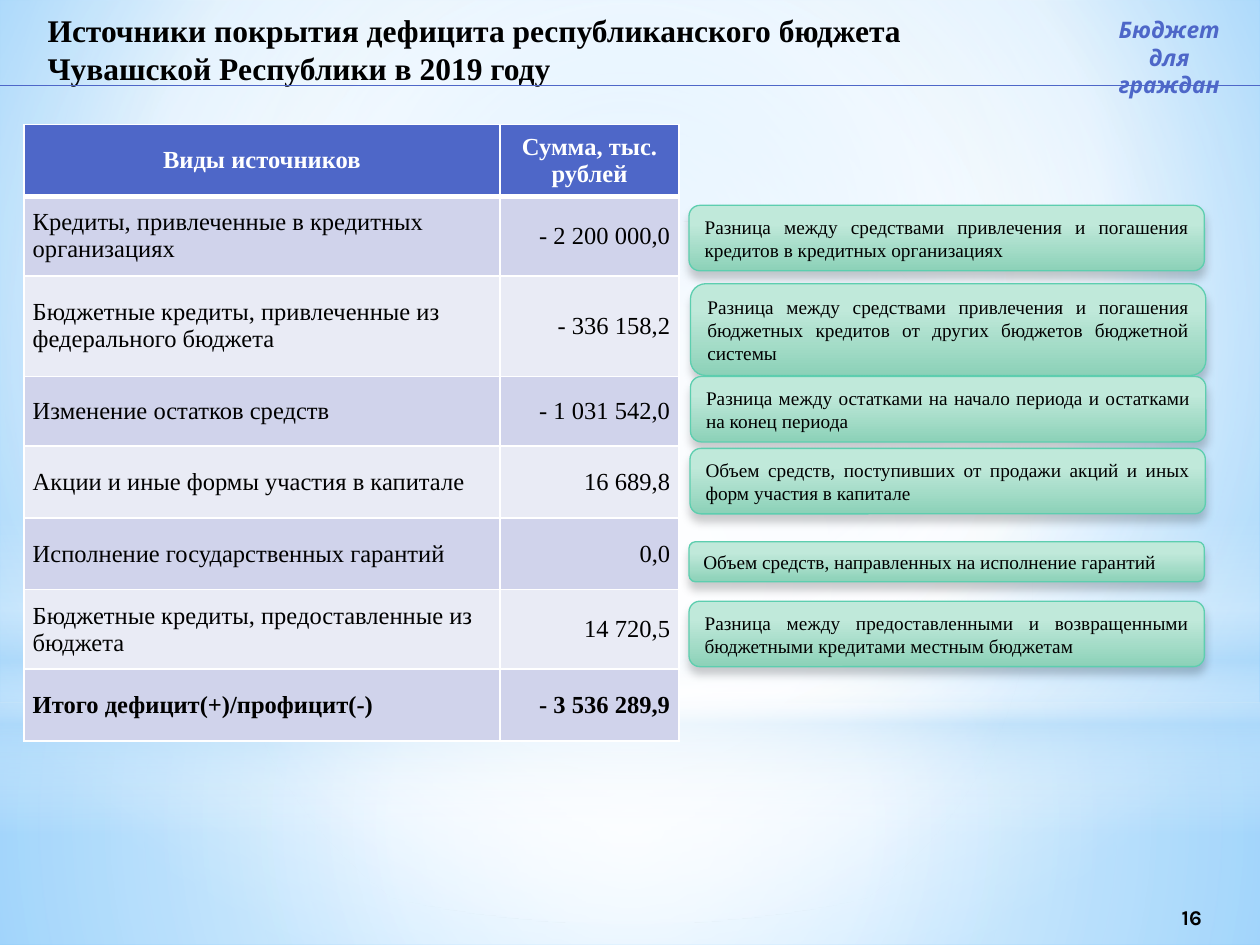
from lxml.etree import SubElement
from pptx import Presentation
from pptx.dml.color import RGBColor
from pptx.enum.shapes import MSO_CONNECTOR, MSO_SHAPE
from pptx.enum.text import MSO_ANCHOR, MSO_AUTO_SIZE, PP_ALIGN
from pptx.oxml import parse_xml
from pptx.oxml.ns import nsdecls, qn
from pptx.util import Cm, Pt

ROWS = [
    ("Виды источников", "Сумма, тыс. рублей", 1.45),
    ("Кредиты, привлеченные в кредитных организациях", "- 2 200 000,0", 1.6),
    ("Бюджетные кредиты, привлеченные из федерального бюджета", "- 336 158,2", 2.03),
    ("Изменение остатков средств", "- 1 031 542,0", 1.4),
    ("Акции и иные формы участия в капитале", "16 689,8", 1.45),
    ("Исполнение государственных гарантий", "0,0", 1.45),
    ("Бюджетные кредиты, предоставленные из бюджета", "14 720,5", 1.6),
    ("Итого дефицит(+)/профицит(-)", "- 3 536 289,9", 1.45),
]
NOTES = [
    (13.89, 4.14, 1.32, "Разница между средствами привлечения и погашения кредитов "
                        "в кредитных организациях"),
    (13.92, 5.72, 1.85, "Разница между средствами привлечения и погашения бюджетных "
                        "кредитов от других бюджетов бюджетной системы"),
    (13.92, 7.59, 1.32, "Разница между остатками на начало периода и остатками "
                        "на конец периода"),
    (13.91, 9.04, 1.32, "Объем средств, поступивших от продажи акций и иных форм "
                        "участия в капитале"),
    (13.89, 10.92, 0.81, "Объем средств, направленных на исполнение гарантий"),
    (13.89, 12.12, 1.32, "Разница между предоставленными и возвращенными бюджетными "
                         "кредитами местным бюджетам"),
]
WHITE, SKY = "FFFFFF", "B4DCFA"
LINEAR = '<a:lin ang="5400000" scaled="0"/>'


def color(value):
    return RGBColor.from_string(value)


def circle(left=50, top=50, right=50, bottom=50):
    return (f'<a:path path="circle"><a:fillToRect l="{left * 1000}" t="{top * 1000}" '
            f'r="{right * 1000}" b="{bottom * 1000}"/></a:path>')


def gradient(stops, direction):
    entries = "".join(
        f'<a:gs pos="{position * 1000}"><a:srgbClr val="{value}">'
        f'<a:alpha val="{opacity * 1000}"/></a:srgbClr></a:gs>'
        for position, value, opacity in stops)
    return parse_xml(f'<a:gradFill {nsdecls("a")} rotWithShape="1">'
                     f'<a:gsLst>{entries}</a:gsLst>{direction}</a:gradFill>')


class BudgetSlide:
    serif, sans = "Times New Roman", "Karla"
    accent, black = "4E67C8", "000000"
    bands = ("E9EBF5", "D0D3EB")
    mint = [(28, "C0E9DA", 100), (100, "8CD1B8", 100)]
    mint_line = "5DCEAF"

    def __init__(self, presentation):
        self.slide = presentation.slides.add_slide(presentation.slide_layouts[6])

    def background(self, stops, direction):
        self.slide.background.fill.solid()
        properties = self.slide.element.find(".//" + qn("p:bgPr"))
        properties.replace(properties[0], gradient(stops, direction))

    def set_text(self, text_frame, text, size, font, value, alignment, bold=False, italic=False):
        text_frame.text = text
        text_frame.word_wrap = True
        for paragraph in text_frame.paragraphs:
            paragraph.alignment = alignment
            for run in paragraph.runs:
                run.font.size, run.font.name = Pt(size), font
                run.font.bold, run.font.italic = bold, italic
                run.font.color.rgb = color(value)

    def glow(self, kind, left, top, width, height, stops, direction):
        shape = self.slide.shapes.add_shape(kind, Cm(left), Cm(top), Cm(width), Cm(height))
        shape.shadow.inherit = False
        shape.line.fill.background()
        shape.fill.solid()
        properties = shape.element.spPr
        properties.replace(properties.find(qn("a:solidFill")), gradient(stops, direction))
        return shape

    def note(self, left, top, height, text):
        shape = self.glow(MSO_SHAPE.ROUNDED_RECTANGLE, left, top, 10.39, height,
                          self.mint, LINEAR)
        shape.line.color.rgb = color(self.mint_line)
        shape.line.width = Pt(0.75)
        effects = shape.element.spPr.find(qn("a:effectLst"))
        effects.append(parse_xml(
            f'<a:outerShdw {nsdecls("a")} blurRad="{Pt(5)}" dist="{Pt(4)}" dir="5400000" '
            'rotWithShape="0"><a:srgbClr val="000000"><a:alpha val="20000"/></a:srgbClr>'
            '</a:outerShdw>'))
        self.set_text(shape.text_frame, text, 11, self.serif, self.black, PP_ALIGN.JUSTIFY)
        shape.text_frame.vertical_anchor = MSO_ANCHOR.MIDDLE
        shape.text_frame.auto_size = MSO_AUTO_SIZE.SHAPE_TO_FIT_TEXT

    def label(self, left, top, width, height, text, *style, anchor=MSO_ANCHOR.TOP, **emphasis):
        box = self.slide.shapes.add_textbox(Cm(left), Cm(top), Cm(width), Cm(height))
        self.set_text(box.text_frame, text, *style, **emphasis)
        box.text_frame.vertical_anchor = anchor

    def rule(self, top, width):
        line = self.slide.shapes.add_connector(
            MSO_CONNECTOR.STRAIGHT, Cm(0), Cm(top), Cm(width), Cm(top))
        line.line.color.rgb = color(self.accent)
        line.line.width = Pt(0.75)
        SubElement(line.element.spPr, qn("a:effectLst"))

    def cell(self, cell, text, fill, value, alignment, bold, bottom):
        properties = cell._tc.get_or_add_tcPr()
        for side, width in (("L", 1), ("R", 1), ("T", 1), ("B", bottom)):
            properties.append(parse_xml(
                f'<a:ln{side} {nsdecls("a")} w="{Pt(width)}"><a:solidFill>'
                f'<a:srgbClr val="{WHITE}"/></a:solidFill></a:ln{side}>'))
        cell.fill.solid()
        cell.fill.fore_color.rgb = color(fill)
        cell.margin_left = cell.margin_right = Cm(0.18)
        cell.margin_top = cell.margin_bottom = Cm(0.13)
        cell.vertical_anchor = MSO_ANCHOR.MIDDLE
        self.set_text(cell.text_frame, text, 14, self.serif, value, alignment, bold)

    def table(self, left, top, widths, rows):
        height = sum(row[-1] for row in rows)
        table = self.slide.shapes.add_table(
            len(rows), len(widths), Cm(left), Cm(top), Cm(sum(widths)), Cm(height)).table
        for column, width in zip(table.columns, widths):
            column.width = Cm(width)
        for index, (*texts, row_height) in enumerate(rows):
            table.rows[index].height = Cm(row_height)
            header = index == 0
            bold = header or index == len(rows) - 1
            fill = self.accent if header else self.bands[index % 2]
            for position, text in enumerate(texts):
                side = (PP_ALIGN.LEFT, PP_ALIGN.RIGHT)[position]
                self.cell(table.cell(index, position), text, fill,
                          WHITE if header else self.black,
                          PP_ALIGN.CENTER if header else side, bold, 3 if header else 1)


def main():
    presentation = Presentation()
    presentation.slide_width, presentation.slide_height = Cm(25.4), Cm(19.05)
    page = BudgetSlide(presentation)

    page.background([(0, "9ED5FF", 100), (60, WHITE, 100), (100, "5BB9FF", 100)],
                    circle(20, 10, 20, 60))
    page.glow(MSO_SHAPE.RECTANGLE, 0, 14.17, 25.4, 4.88,
              [(0, WHITE, 91), (37, WHITE, 76), (100, SKY, 79)], circle())
    page.glow(MSO_SHAPE.RECTANGLE, 0, 0, 25.4, 14.17,
              [(0, WHITE, 89), (48, WHITE, 62), (100, SKY, 79)], circle())
    page.glow(MSO_SHAPE.RECTANGLE, 0, 10.46, 25.4, 6.35,
              [(0, WHITE, 0), (29, WHITE, 30), (45, SKY, 40),
               (55, WHITE, 26), (65, SKY, 60), (100, WHITE, 0)], LINEAR)
    page.glow(MSO_SHAPE.OVAL, 0, 4.45, 25.4, 14.17,
              [(0, WHITE, 100), (56, WHITE, 0)], circle())

    page.table(0.48, 2.51, (9.6, 3.61), ROWS)
    for note in NOTES:
        page.note(*note)

    page.label(22.63, 17.98, 2.79, 1.02, "16", 12, page.sans, page.black,
               PP_ALIGN.CENTER, anchor=MSO_ANCHOR.MIDDLE, bold=True)
    page.label(0.71, 0.1, 19.79, 1.52,
               "Источники покрытия дефицита республиканского бюджета "
               "Чувашской Республики в 2019 году",
               18, page.serif, page.black, PP_ALIGN.LEFT, bold=True)
    page.rule(1.73, 25.4)
    page.label(21.87, 0.2, 3.4, 1.37, "Бюджет\nдля граждан", 13, page.sans, page.accent,
               PP_ALIGN.CENTER, bold=True, italic=True)

    presentation.save("out.pptx")


if __name__ == "__main__":
    main()
